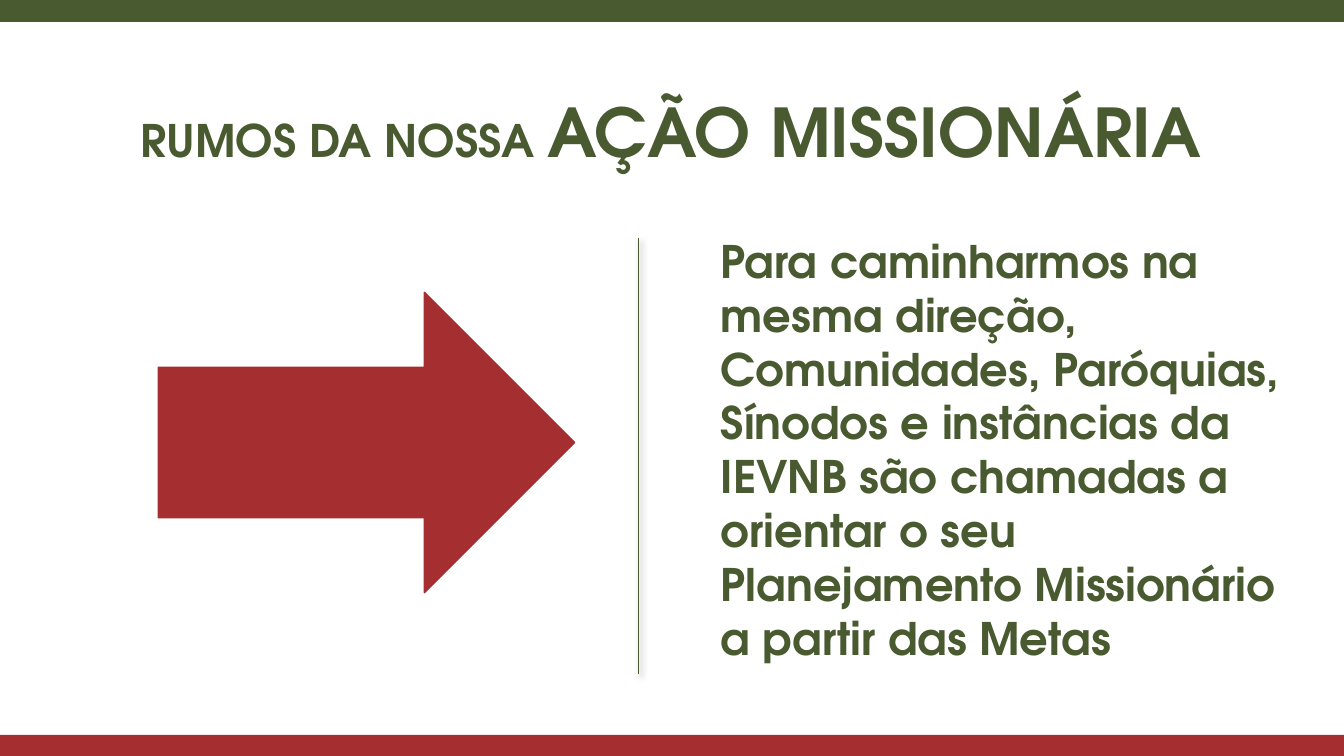
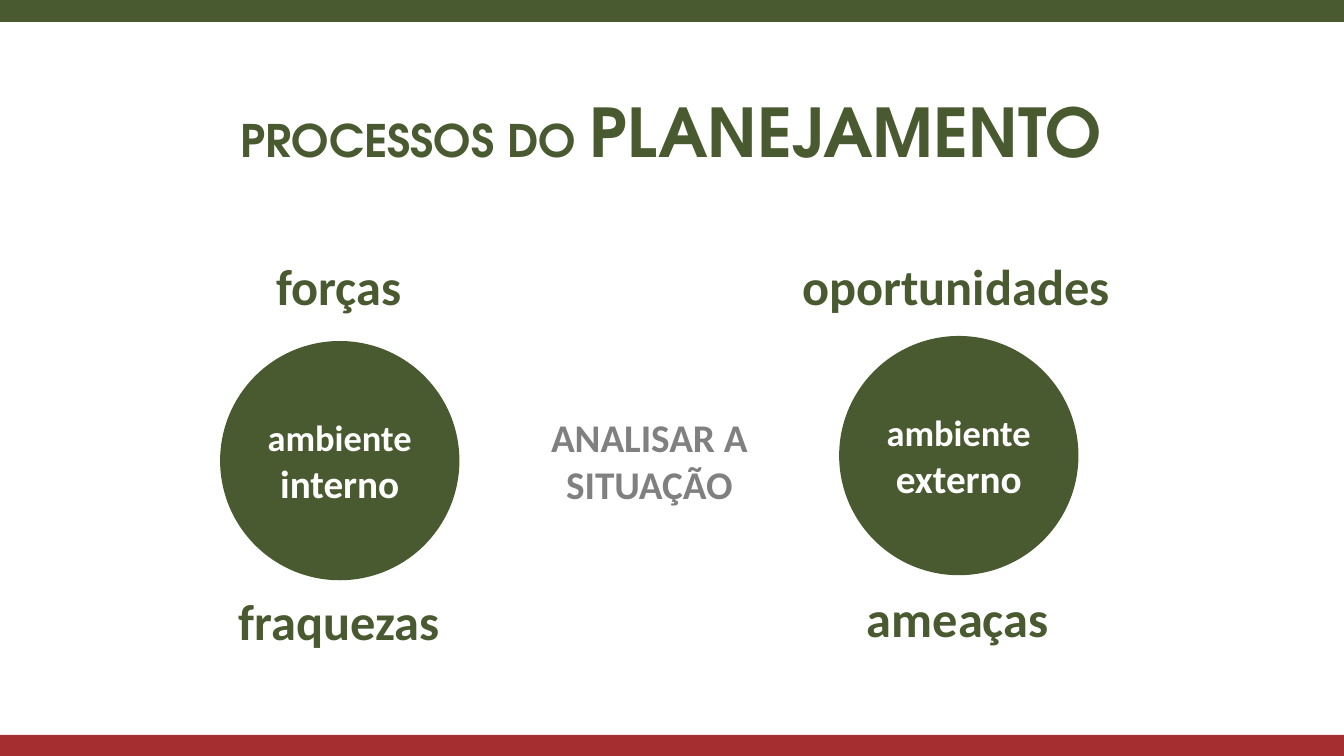
import pptx
import pptx.dml.color
import pptx.enum.shapes
import pptx.enum.text
import pptx.oxml
import pptx.oxml.ns
import pptx.util

PX = 9144
COLORS = {"green": "4A5A30", "red": "A52E30", "gray": "808080", "white": "FFFFFF", "shadow": "000000"}
TITLE_FONT = "TeX Gyre Adventor"
LABEL_FONT = "Calibri"
SHAPES = pptx.enum.shapes.MSO_SHAPE
ALIGN = pptx.enum.text.PP_ALIGN
MIDDLE = pptx.enum.text.MSO_ANCHOR.MIDDLE


def color(name):
    return pptx.dml.color.RGBColor.from_string(COLORS[name])


class Deck:
    """Presentation style together with the slide being filled."""

    def __init__(self, width, height):
        self.deck = pptx.Presentation()
        self.width, self.height = width, height
        self.deck.slide_width, self.deck.slide_height = width * PX, height * PX
        self.page = None

    def add_page(self, lead, topic):
        self.page = self.deck.slides.add_slide(self.deck.slide_layouts[6])
        title = self.text(79, 93, 1173, 83, [[(lead, 32), (topic, 48)]], TITLE_FONT, align=ALIGN.CENTER)
        title.vertical_anchor = MIDDLE
        title.paragraphs[0].line_spacing = 0.9
        self.shape(SHAPES.RECTANGLE, 0, self.height - 21, 1351, 21, "red", outlined=False)
        self.shape(SHAPES.RECTANGLE, 0, 0, 1351, 21, "green")

    def fill_frame(self, frame, lines, font, fill, align):
        for index, spans in enumerate(lines):
            para = frame.add_paragraph() if index else frame.paragraphs[0]
            para.alignment = align
            para.font.name = font
            para.font.bold = True
            para.font.color.rgb = color(fill)
            sizes = {size for _, size in spans}
            if len(sizes) == 1:
                para.font.size = pptx.util.Pt(sizes.pop())
            for text, size in spans:
                if text == "\n":
                    para.add_line_break()
                    continue
                span = para.add_run()
                span.text = text
                if len(spans) > 1:
                    span.font.size = pptx.util.Pt(size)

    def text(self, left, top, width, height, lines, font, fill="green", align=None, wrap=True, grow=True):
        box = self.page.shapes.add_textbox(left * PX, top * PX, width * PX, height * PX)
        frame = box.text_frame
        frame.word_wrap = wrap
        if grow:
            frame.auto_size = pptx.enum.text.MSO_AUTO_SIZE.SHAPE_TO_FIT_TEXT
        self.fill_frame(frame, lines, font, fill, align)
        return frame

    def label(self, left, top, width, text):
        self.text(left, top, width, 71, [[(text, 36)]], LABEL_FONT, wrap=False)

    def shape(self, kind, left, top, width, height, fill, outlined=True):
        shape = self.page.shapes.add_shape(kind, left * PX, top * PX, width * PX, height * PX)
        shape.shadow.inherit = False
        shape.fill.solid()
        shape.fill.fore_color.rgb = color(fill)
        if outlined:
            shape.line.color.rgb = color(fill)
            shape.line.width = pptx.util.Pt(1)
        else:
            shape.line.fill.background()
        return shape

    def circle(self, left, top, first, second):
        frame = self.shape(SHAPES.OVAL, left, top, 236, 236, "green").text_frame
        frame.vertical_anchor = MIDDLE
        self.fill_frame(frame, [[(first, 26), ("\n", 26), (second, 28)]], LABEL_FONT, "white", ALIGN.CENTER)

    def divider(self, left, top, bottom):
        line = self.page.shapes.add_connector(
            pptx.enum.shapes.MSO_CONNECTOR.STRAIGHT, left * PX, top * PX, left * PX, bottom * PX)
        line.line.color.rgb = color("green")
        line.line.width = pptx.util.Pt(1)
        line._element.spPr.append(pptx.oxml.parse_xml(
            f'<a:effectLst {pptx.oxml.ns.nsdecls("a")}>'
            f'<a:outerShdw blurRad="{pptx.util.Pt(4)}" dist="{pptx.util.Pt(3)}" dir="{45 * 60000}">'
            f'<a:srgbClr val="{COLORS["shadow"]}"><a:alpha val="40000"/></a:srgbClr>'
            '</a:outerShdw></a:effectLst>'))


def build_direction(deck):
    deck.add_page("RUMOS DA NOSSA ", "AÇÃO MISSIONÁRIA")
    message = ("Para caminharmos na mesma direção, Comunidades, Paróquias, Sínodos e instâncias "
               "da IEVNB são chamadas a orientar o seu Planejamento Missionário a partir das Metas")
    deck.text(705, 227, 595, 339, [[(message, 32)]], TITLE_FONT, grow=False)
    deck.divider(633, 236, 669)
    deck.shape(SHAPES.RIGHT_ARROW, 157, 290, 413, 298, "red")


def build_analysis(deck):
    deck.add_page("PROCESSOS DO ", "PLANEJAMENTO")
    environments = [
        ((219, 339, "ambiente", "interno"), (264, 248, 146, "forças"), (227, 581, 221, "fraquezas")),
        ((833, 334, "ambiente", "externo"), (786, 248, 329, "oportunidades"), (850, 578, 202, "ameaças")),
    ]
    for circle, above, below in environments:
        deck.circle(*circle)
        deck.label(*above)
        deck.label(*below)
    deck.text(535, 405, 218, 105, [[("ANALISAR A", 28)], [("SITUAÇÃO", 28)]],
              LABEL_FONT, "gray", ALIGN.CENTER, wrap=False)


def main():
    deck = Deck(1333, 750)
    build_direction(deck)
    build_analysis(deck)
    deck.deck.save("out.pptx")


if __name__ == "__main__":
    main()
